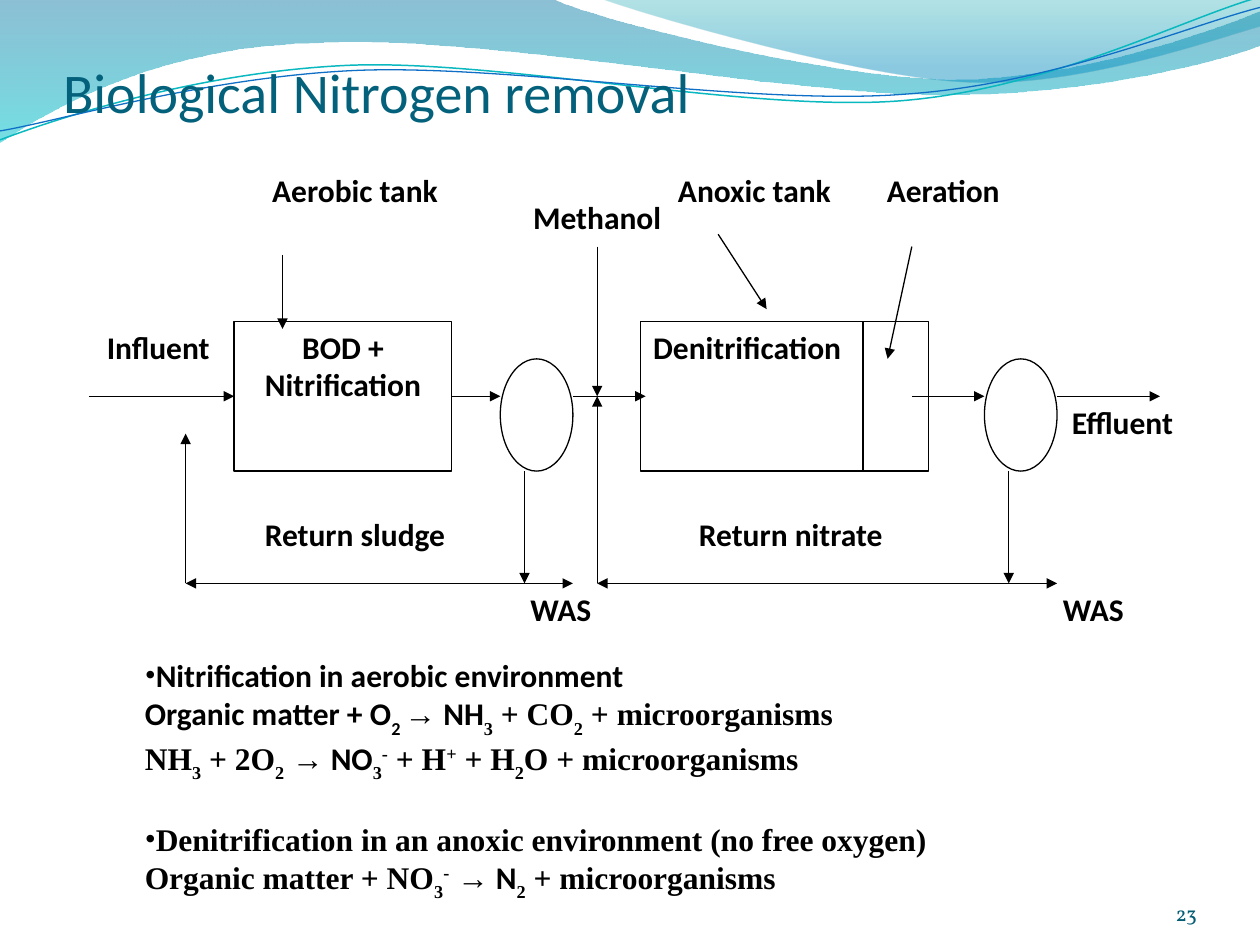
from dataclasses import dataclass

from lxml.etree import SubElement
from pptx import Presentation
from pptx.dml.color import RGBColor
from pptx.enum.shapes import MSO_CONNECTOR, MSO_SHAPE
from pptx.enum.text import MSO_ANCHOR, PP_ALIGN
from pptx.oxml.ns import qn
from pptx.util import Cm, Pt


@dataclass(frozen=True)
class Theme:
    ink: str = "000000"
    paper: str = "FFFFFF"
    title: str = "04617B"
    number: str = "045D75"
    sans: str = "Calibri"
    serif: str = "Times New Roman"
    number_font: str = "Vollkorn"
    title_size: int = 32
    body_size: int = 18
    number_size: int = 12
    line: float = 0.75


THEME = Theme()

# Diagram grid: 40 columns from the inlet to the second clarifier, 7 rows down to the return line
LEFT, COL = 1.79, 19.52 / 40
TOP, ROW = 6.48, 5.28 / 7

# Waves: start point, then segments of one point (line) or three points (curve), in cm
BANDS = [
    ((0, 0), [[(11.18, 0)],
              [(12.09, 0.43), (16.87, 1.6), (19.25, 1.6)],
              [(21.67, 1.6), (24.33, 0.66), (25.4, 0.23)],
              [(25.4, 0.91)],
              [(24.97, 1.12), (22.1, 1.93), (18.95, 1.91)],
              [(15.8, 1.91), (9.7, 0.71), (6.53, 0.86)],
              [(3.28, 0.91), (1.17, 2.11), (0, 2.87)]],
     [(0, "0074A1", 45), (1, "00C6CF", 55)]),
    ((12.17, 0), [[(12.93, 0.28), (17.32, 1.57), (19.53, 1.65)],
                  [(21.74, 1.75), (24.41, 0.81), (25.4, 0.53)],
                  [(25.4, 0)]],
     [(0, "00A1A9", 30), (0.8, "008BBF", 45)]),
]
STRAND_ROTATION = 357.3
STRANDS = [
    ((-0.05, 2.22), [[(1.19, 1.82), (4.02, 1.04), (7.05, 1.05)],
                     [(10.05, 1.07), (15.02, 2.37), (18.08, 2.29)],
                     [(21.13, 2.2), (23.86, 0.91), (25.41, 0.55)]], "0AB8BF", 0.85),
    ((-0.04, 2.04), [[(1.16, 1.9), (4.17, 1.15), (7.2, 1.16)],
                     [(10.25, 1.18), (15.13, 2.25), (18.19, 2.16)],
                     [(21.21, 2.1), (23.93, 1.06), (25.45, 0.75)]], "0F6FC6", 0.75),
]

# Labels: text, column, row, columns wide, rows high
LABELS = [
    ("Aerobic tank", 6, -4.19, 10, 3), ("Methanol", 17, -3.47, 8, 3),
    ("Anoxic tank", 23, -4.19, 9, 3), ("Aeration", 30.8, -4.19, 9, 3),
    ("Influent", -0.13, 0, 6, 3), ("Effluent", 39.7, 2, 6, 3),
    ("Return sludge", 6, 5, 10, 3), ("Return nitrate", 24, 5, 10, 2),
    ("WAS", 17, 7, 5, 2), ("WAS", 39, 7, 5, 2),
]

# Flows: start, end, ends that carry a head (h start, t end)
FLOWS = [
    ((20, 2), (23, 2), "t"), ((34, 2), (37, 2), "t"), ((40, 2), (44.25, 2), "t"),
    ((4, 7), (4, 3), "t"), ((20, 7), (4, 7), "ht"), ((18, 4), (18, 7), "t"),
    ((21, 7), (21, 2), "t"), ((21, 7), (40, 7), "ht"), ((38, 4), (38, 7), "t"),
    ((21, -2), (21, 2), "t"), ((8, -1.78), (8, 0.2), "t"),
    ((26, -2.33), (28, -0.33), "t"), ((34, -2), (33, 1), "t"),
    ((31.98, 0), (31.98, 4), ""),
]

# Run styles: font, baseline shift in thousandths of a percent
STYLES = {
    "c": (THEME.sans, 0), "c_sub": (THEME.sans, -30000),
    "t": (THEME.serif, 0), "sub": (THEME.serif, -30000), "sup": (THEME.serif, 30000),
}
REACTIONS = [
    (True, [("Nitrification in aerobic environment", "c")]),
    (False, [("Organic matter + O", "c"), ("2 ", "c_sub"), ("→", "t"), (" NH", "c"),
             ("3", "sub"), (" + CO", "t"), ("2", "sub"), (" + microorganisms", "t")]),
    (False, [("NH", "t"), ("3", "sub"), (" + 2O", "t"), ("2", "sub"), (" →", "t"),
             (" NO", "c"), ("3", "sub"), ("-", "sup"), (" + H", "t"), ("+", "sup"),
             (" + H", "t"), ("2", "sub"), ("O + microorganisms", "t")]),
    (True, [("Denitrification in an anoxic environment (no free oxygen)", "t")]),
    (False, [("Organic matter + NO", "t"), ("3", "sub"), ("-", "sup"), (" →", "t"),
             (" N", "c"), ("2", "sub"), (" + microorganisms", "t")]),
]


def apply(target, **values):
    for name, value in values.items():
        setattr(target, name, value)


def grid(col, row):
    return Cm(LEFT + COL * col), Cm(TOP + ROW * row)


def grid_box(col, row, cols, rows):
    return *grid(col, row), Cm(COL * cols), Cm(ROW * rows)


def add_run(p, text, font=THEME.sans, size=THEME.body_size, color=THEME.ink, bold=True):
    r = p.add_run()
    r.text = text
    apply(r.font, name=font, size=Pt(size), bold=bold)
    r.font.color.rgb = RGBColor.from_string(color)
    return r


def set_line(sp, color=THEME.ink, width=THEME.line):
    sp.line.color.rgb = RGBColor.from_string(color)
    sp.line.width = Pt(width)


def set_text(sp, text, align=PP_ALIGN.CENTER):
    apply(sp.text_frame, word_wrap=True, vertical_anchor=MSO_ANCHOR.TOP)
    p = sp.text_frame.paragraphs[0]
    apply(p, alignment=align, space_after=Pt(10))
    add_run(p, text)


def add_wave(s, start, segments, close):
    """Build the outline through the segment ends, then bend the three-point segments."""
    builder = s.shapes.build_freeform(Cm(start[0]), Cm(start[1]))
    builder.add_line_segments([(Cm(x), Cm(y)) for x, y in (seg[-1] for seg in segments)], close)
    sp = builder.convert_to_shape()
    sp.shadow.inherit = False
    for step, seg in zip(list(sp._element.iter(qn("a:lnTo"))), segments):
        if len(seg) == 3:
            curve = step.makeelement(qn("a:cubicBezTo"))
            for x, y in seg:
                SubElement(curve, qn("a:pt"), x=str(Cm(x) - sp.left), y=str(Cm(y) - sp.top))
            step.getparent().replace(step, curve)
    return sp


def add_band(s, start, segments, stops):
    sp = add_wave(s, start, segments, True)
    sp.line.fill.background()
    sp.fill.gradient()
    sp.fill.gradient_angle = 270
    for stop, (position, color, _) in zip(sp.fill.gradient_stops, stops):
        stop.position = position
        stop.color.rgb = RGBColor.from_string(color)
    for clr, (_, _, opacity) in zip(sp._element.spPr.iter(qn("a:srgbClr")), stops):
        SubElement(clr, qn("a:alpha"), val=str(opacity * 1000))


def add_strand(s, start, segments, color, width):
    sp = add_wave(s, start, segments, False)
    sp.rotation = STRAND_ROTATION
    sp.fill.background()
    set_line(sp, color, width)


def add_unit(s, kind, *cells):
    sp = s.shapes.add_shape(kind, *grid_box(*cells))
    sp.shadow.inherit = False
    sp.fill.solid()
    sp.fill.fore_color.rgb = RGBColor.from_string(THEME.paper)
    set_line(sp)
    return sp


def add_flow(s, start, end, heads):
    cx = s.shapes.add_connector(MSO_CONNECTOR.STRAIGHT, *grid(*start), *grid(*end))
    set_line(cx)
    for key, tag in (("h", "a:headEnd"), ("t", "a:tailEnd")):
        if key in heads:
            SubElement(cx.line._get_or_add_ln(), qn(tag), type="triangle")
    SubElement(cx._element.spPr, qn("a:effectLst"))
    return cx


def add_title(s, text):
    title = s.shapes.title
    s.shapes._spTree.append(title._element)  # in front of the waves
    apply(title, left=Cm(1.27), top=Cm(0.76), width=Cm(22.86), height=Cm(1.75))
    tf = title.text_frame
    apply(tf, margin_left=0, margin_right=0, margin_bottom=0, vertical_anchor=MSO_ANCHOR.BOTTOM)
    tf.paragraphs[0].alignment = PP_ALIGN.LEFT
    add_run(tf.paragraphs[0], text, size=THEME.title_size, color=THEME.title, bold=False)


def add_reactions(s):
    tf = s.shapes.add_textbox(Cm(1.4), Cm(13.23), Cm(22.5), Cm(5.64)).text_frame
    apply(tf, word_wrap=True, margin_top=0)
    for i, (bullet, runs) in enumerate(REACTIONS):
        p = tf.paragraphs[0] if i == 0 else tf.add_paragraph()
        pPr = p._p.get_or_add_pPr()
        pPr.set("marL", "0")
        pPr.set("indent", str(Cm(1.27)))
        if bullet:
            p.space_before = Pt(21 if i else 0)
            SubElement(pPr, qn("a:buFont"), typeface=THEME.serif)
            SubElement(pPr, qn("a:buChar"), char="•")
        for text, style in runs:
            font, shift = STYLES[style]
            r = add_run(p, text, font)
            if shift:
                r.font._element.set("baseline", str(shift))


def add_page_number(s, text):
    tf = s.shapes.add_textbox(Cm(22.02), Cm(17.65), Cm(2.11), Cm(1.02)).text_frame
    apply(tf, margin_left=0, margin_right=0, margin_top=0, margin_bottom=0,
          word_wrap=True, vertical_anchor=MSO_ANCHOR.BOTTOM)
    tf.paragraphs[0].alignment = PP_ALIGN.RIGHT
    add_run(tf.paragraphs[0], text, THEME.number_font, THEME.number_size, THEME.number, False)


def add_diagram(s):
    aerobic = add_unit(s, MSO_SHAPE.RECTANGLE, 6, 0, 9, 4)
    set_text(aerobic, "BOD + Nitrification")
    anoxic = add_unit(s, MSO_SHAPE.RECTANGLE, 22.8, 0, 11.88, 4)
    set_text(anoxic, "Denitrification", PP_ALIGN.LEFT)
    for col in (17, 37):
        add_unit(s, MSO_SHAPE.OVAL, col, 1, 3, 3)
    add_flow(s, (0, 2), (6, 2), "t").end_connect(aerobic, 1)
    add_flow(s, (15, 2), (17, 2), "t").begin_connect(aerobic, 3)
    for flow in FLOWS:
        add_flow(s, *flow)
    for text, *cells in LABELS:
        set_text(s.shapes.add_textbox(*grid_box(*cells)), text)


def main():
    prs = Presentation()
    apply(prs, slide_width=Cm(25.4), slide_height=Cm(19.05))
    s = prs.slides.add_slide(prs.slide_layouts[5])
    for band in BANDS:
        add_band(s, *band)
    for strand in STRANDS:
        add_strand(s, *strand)
    add_title(s, "Biological Nitrogen removal")
    add_page_number(s, "23")
    add_diagram(s)
    add_reactions(s)
    prs.save("out.pptx")


if __name__ == "__main__":
    main()
